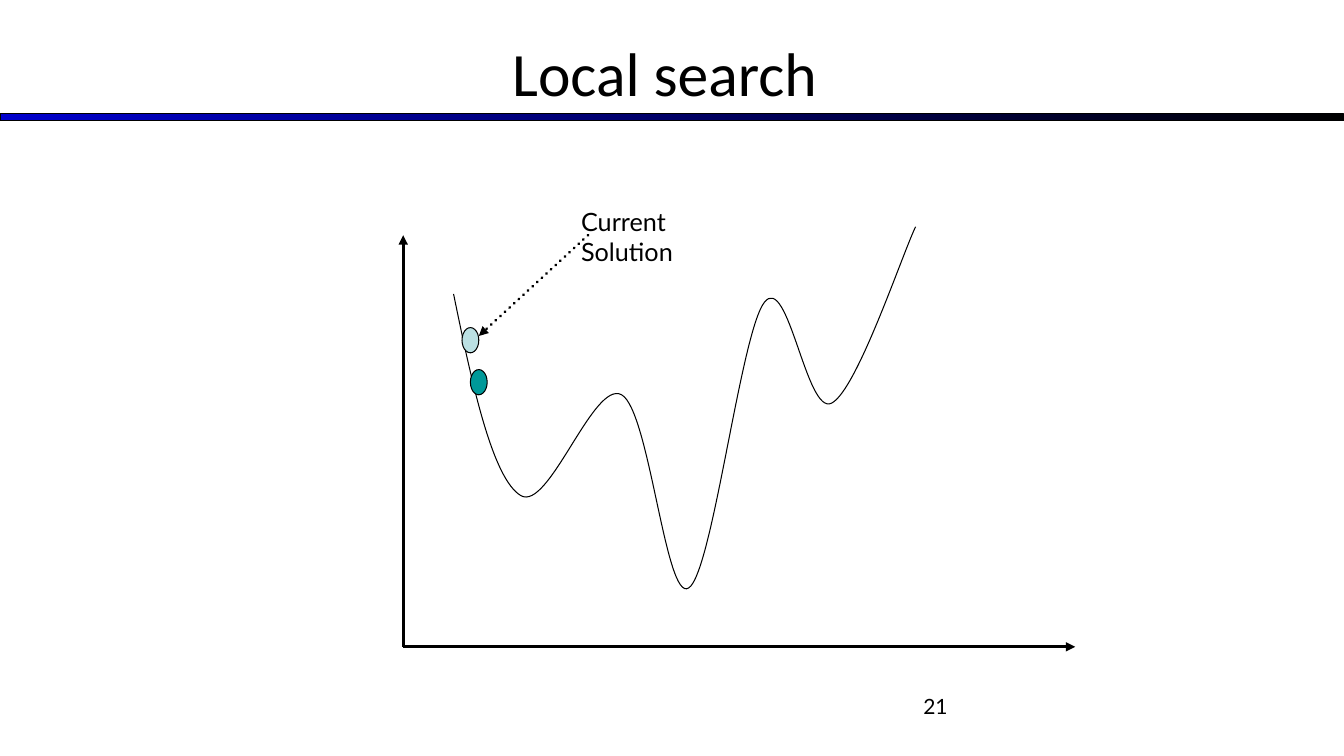
"""Build the local search slide: a cost curve with two solutions on it."""
import pptx
import pptx.util
import pptx.dml.color
import pptx.enum.dml
import pptx.enum.shapes
import pptx.enum.text
import pptx.oxml.ns
import lxml.etree

SIZE = (960, 540)
BAR = (0, 81.4, 960, 5)
ENDS = ("0000CC", "000000")
INK = "000000"
TEXTS = [
    ("Local search", (168, 18.7, 613.5, 64.8), "Calibri", 44, "CENTER", "MIDDLE", "NONE"),
    ("Current Solution", (408, 144, 84, 50.4), "Lato", 18, "LEFT", "TOP", "SHAPE_TO_FIT_TEXT"),
    ("21", (516, 492, 168, 37.4), "Lato", 15, "RIGHT", "TOP", "NONE"),
]
ARROWS = [
    ((288, 168), (288, 462), "headEnd", None),
    ((288, 462), (768, 462), "tailEnd", None),
    ((420, 168), (342, 240), "tailEnd", "ROUND_DOT"),
]
DOTS = [((330, 234), "BBE0E3"), ((336, 264), "009999")]
DOT = (12, 18)
START = (324, 210)
CURVE = [
    ((337.5, 276), (352, 342), (372, 354)),
    ((392, 366), (424, 271), (444, 282)),
    ((464, 293), (475.5, 431), (492, 420)),
    ((509, 409), (529, 238), (546, 216)),
    ((563, 194), (576, 297), (594, 288)),
    ((612, 279), (644, 183), (654, 162)),
]

Pt = pptx.util.Pt
qn = pptx.oxml.ns.qn
Kind = pptx.enum.shapes.MSO_SHAPE
deck = pptx.Presentation()
deck.slide_width, deck.slide_height = map(Pt, SIZE)
slide = deck.slides.add_slide(deck.slide_layouts[6])
shapes = slide.shapes


def paint(color, code):
    color.rgb = pptx.dml.color.RGBColor.from_string(code)


def edge(line, width):
    line.fill.solid()
    paint(line.color, INK)
    line.width = Pt(width)


def form(kind, box):
    item = shapes.add_shape(kind, *map(Pt, box))
    item.shadow.inherit = False
    edge(item.line, 0.75)
    return item


def write(words, box, font, size, align, anchor, fit):
    frame = shapes.add_textbox(*map(Pt, box)).text_frame
    frame.word_wrap = True
    frame.auto_size = pptx.enum.text.MSO_AUTO_SIZE[fit]
    frame.vertical_anchor = pptx.enum.text.MSO_ANCHOR[anchor]
    para = frame.paragraphs[0]
    para.alignment = pptx.enum.text.PP_ALIGN[align]
    run = para.add_run()
    run.text = words
    run.font.name, run.font.size = font, Pt(size)
    paint(run.font.color, INK)


def arrow(start, end, side, dash):
    link = shapes.add_connector(
        pptx.enum.shapes.MSO_CONNECTOR.STRAIGHT, *map(Pt, start + end))
    edge(link.line, 2.25)
    props = link._element.spPr
    line = props.find(qn("a:ln"))
    if dash:
        link.line.dash_style = pptx.enum.dml.MSO_LINE[dash]
        line.set("cap", "rnd")
    tip = lxml.etree.SubElement(line, qn("a:" + side))
    tip.set("type", "triangle")
    lxml.etree.SubElement(props, qn("a:effectLst"))


def bend(start, parts):
    pen = shapes.build_freeform(*map(Pt, start))
    pen.add_line_segments(
        [tuple(map(Pt, spot)) for part in parts for spot in part], close=False)
    item = pen.convert_to_shape()
    legs = list(item._element.iter(qn("a:lnTo")))
    for first in range(0, len(legs), 3):
        arc = lxml.etree.Element(qn("a:cubicBezTo"))
        legs[first].addprevious(arc)
        for leg in legs[first:first + 3]:
            arc.append(leg[0])
            leg.getparent().remove(leg)
    return item


bar = form(Kind.RECTANGLE, BAR)
bar.fill.gradient()
bar.fill.gradient_angle = 0
for stop, code in zip(bar.fill.gradient_stops, ENDS):
    paint(stop.color, code)

curve = bend(START, CURVE)
curve.shadow.inherit = False
curve.fill.background()
edge(curve.line, 0.75)

for row in TEXTS:
    write(*row)
for row in ARROWS:
    arrow(*row)
for spot, code in DOTS:
    dot = form(Kind.OVAL, spot + DOT)
    dot.fill.solid()
    paint(dot.fill.fore_color, code)

deck.save("out.pptx")
